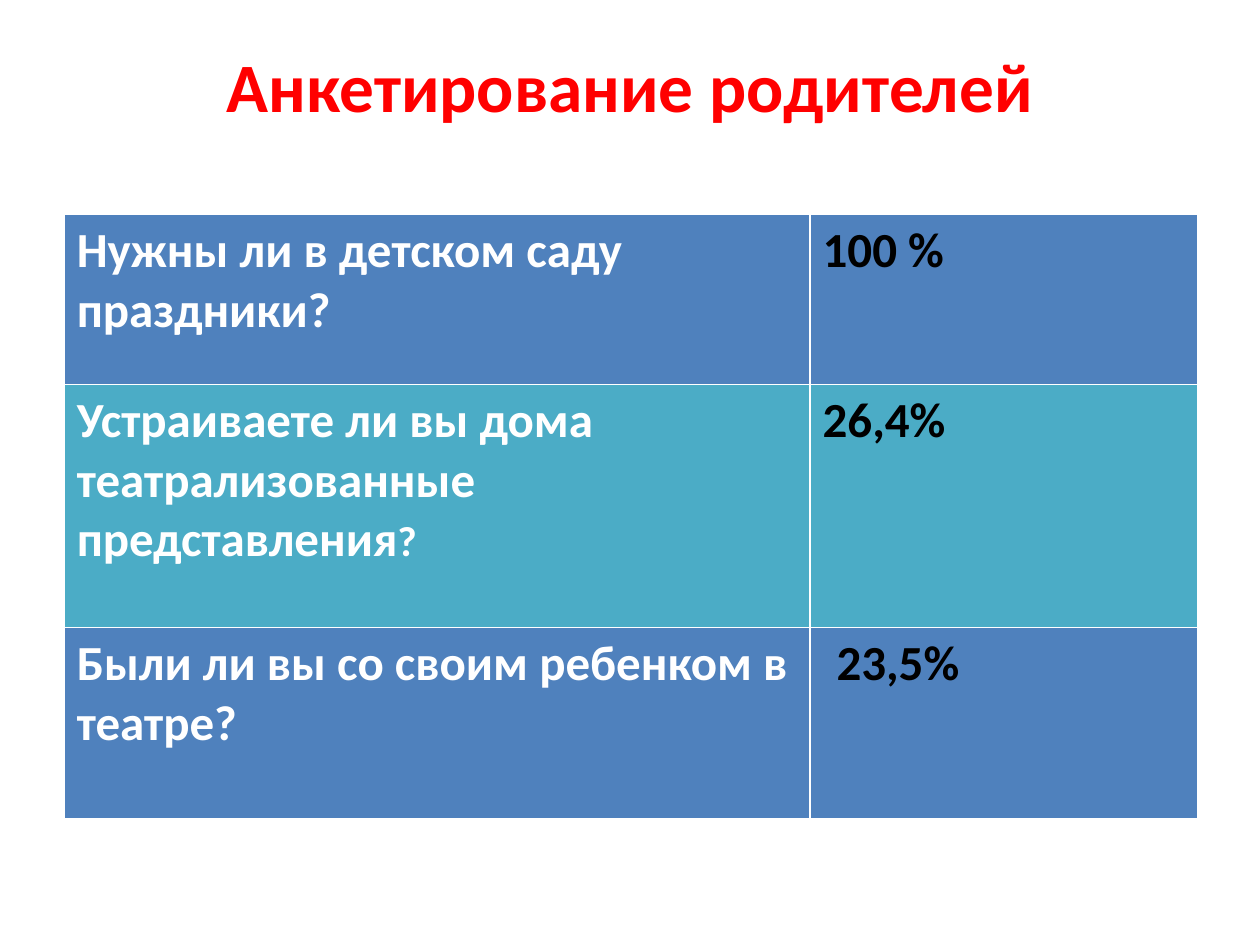
"""Build a slide with the results of a survey of parents."""
from pptx import Presentation
from pptx import util as u
from pptx.dml.color import RGBColor
from pptx.enum import text


def style(r, size, color):
    fmt = {"name": "Calibri", "size": u.Pt(size), "bold": True}
    for key, value in fmt.items():
        setattr(r.font, key, value)
    r.font.color.rgb = RGBColor.from_string(color)


prs = Presentation()
prs.slide_width, prs.slide_height = u.Inches(10), u.Inches(7.5)
W, H = prs.slide_width, prs.slide_height
s = prs.slides.add_slide(prs.slide_layouts[5])

title = s.shapes.title
box = {"left": 0.05 * W, "top": 0.04 * H, "width": 0.9 * W, "height": 0.1 * H}
for key, value in box.items():
    setattr(title, key, int(value))
tf = title.text_frame
tf.vertical_anchor = text.MSO_ANCHOR.MIDDLE
p = tf.paragraphs[0]
p.alignment = text.PP_ALIGN.CENTER
r = p.add_run()
r.text = "Анкетирование родителей"
style(r, 39.6, "FF0000")

cols = [5.92, 3.08]
rows = [
    (1.35, "4F81BD", [("Нужны ли в детском саду праздники?", 28)], "100 %", 0.1),
    (1.93, "4BACC6", [("Устраиваете ли вы дома театрализованные представления", 28), ("?", 24)], "26,4%", 0.1),
    (1.52, "4F81BD", [("Были ли вы со своим ребенком в театре?", 28)], "23,5%", 0.21),
]
table = s.shapes.add_table(
    len(rows), len(cols), u.Inches(0.51), u.Inches(1.7),
    u.Inches(sum(cols)), u.Inches(sum(row[0] for row in rows))).table
for col, width in zip(table.columns, cols):
    col.width = u.Inches(width)

for i, (height, fill, question, share, indent) in enumerate(rows):
    table.rows[i].height = u.Inches(height)
    answers = [(question, "FFFFFF", 0.1), ([(share, 28)], "000000", indent)]
    for j, (runs, color, margin) in enumerate(answers):
        cell = table.cell(i, j)
        cell.margin_left = u.Inches(margin)
        cell.fill.solid()
        cell.fill.fore_color.rgb = RGBColor.from_string(fill)
        for words, size in runs:
            r = cell.text_frame.paragraphs[0].add_run()
            r.text = words
            style(r, size, color)

prs.save("out.pptx")
